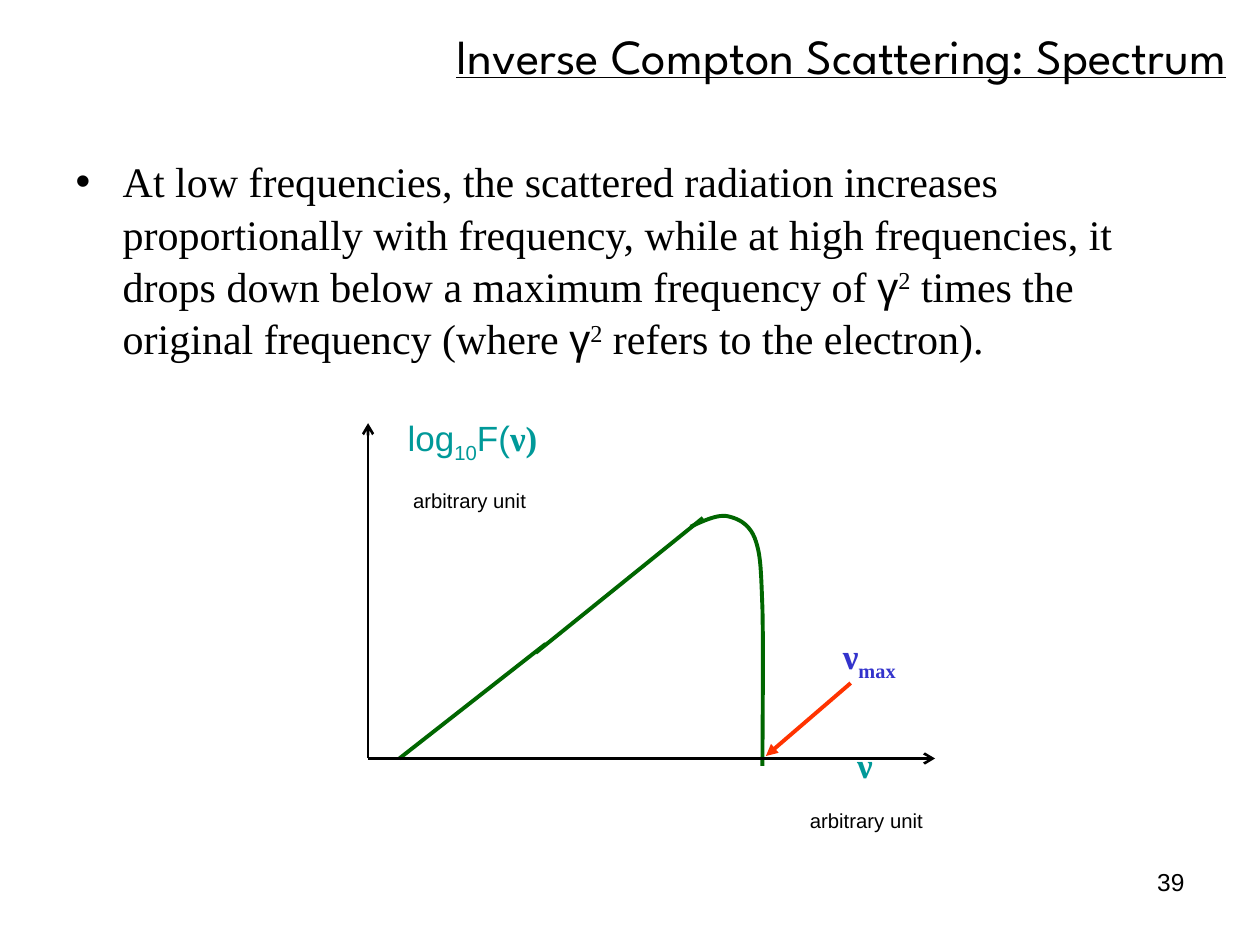
import pptx
import pptx.dml.color
import pptx.enum.shapes
import pptx.enum.text
import pptx.oxml
import pptx.oxml.ns
import pptx.util
import lxml.etree

Cm = pptx.util.Cm
Pt = pptx.util.Pt
RGB = pptx.dml.color.RGBColor
ALIGN = pptx.enum.text.PP_ALIGN
ANCHOR = pptx.enum.text.MSO_ANCHOR
qn = pptx.oxml.ns.qn

BLACK = RGB(0x00, 0x00, 0x00)
GREEN = RGB(0x00, 0x66, 0x00)
TEAL = RGB(0x00, 0x99, 0x99)
BLUE = RGB(0x33, 0x33, 0xCC)
RED = RGB(0xFF, 0x33, 0x00)
SANS, SERIF, HEADING = "Arial", "Times New Roman", "League Spartan"
SUPER, SUB = 30, -25

HEADLINE = [[("Inverse Compton Scattering: Spectrum", HEADING, BLACK, False, 0)]]
GAMMA_SQUARED = [("γ", SANS, BLACK, False, 0), ("2", SERIF, BLACK, False, SUPER)]
STATEMENT = [[
    ("At low frequencies, the scattered radiation increases proportionally with frequency, "
     "while at high frequencies, it drops down below a maximum frequency of ",
     SERIF, BLACK, False, 0),
    *GAMMA_SQUARED,
    (" times the original frequency (where ", SERIF, BLACK, False, 0),
    *GAMMA_SQUARED,
    (" refers to the electron).", SERIF, BLACK, False, 0),
]]
PAGE_NUMBER = [[("39", SANS, BLACK, False, 0)]]
UNIT = ("arbitrary unit ", SANS, BLACK, False, SUB)
AXIS_LABELS = [
    ((15.77, 15.06, 3.51, 1.65), [[("ν ", SERIF, TEAL, True, 0)], [UNIT]]),
    ((7.62, 8.38, 3.81, 1.96), [[
        ("log", SANS, TEAL, False, 0), ("10", SANS, TEAL, False, SUB),
        ("F(", SANS, TEAL, False, 0), ("ν) ", SERIF, TEAL, True, 0), UNIT]]),
    ((15.77, 12.73, 3.51, 1.09),
     [[("ν", SERIF, BLUE, True, 0), ("max", SERIF, BLUE, True, SUB)]]),
]

ORIGIN = (7.42, 15.29)
RISING_LINES = [((10.8, 13.16), (14.17, 10.44)), ((11, 12.98), (8.05, 15.29))]
AXES = [(ORIGIN, (18.85, 15.29)), (ORIGIN, (7.42, 8.53))]
MAX_POINTER = ((17.15, 13.77), (15.44, 15.24))
CUTOFF_START = (13.92, 10.62)
CUTOFF_CURVES = [
    ((14.2, 10.49), (14.48, 10.36), (14.68, 10.41)),
    ((14.91, 10.46), (15.14, 10.59), (15.24, 10.92)),
    ((15.34, 11.23), (15.34, 11.51), (15.37, 12.27)),
    ((15.39, 13.03), (15.37, 15.01), (15.37, 15.44)),
]
CURVE_STEPS = 12


def place(shape, box):
    shape.left, shape.top, shape.width, shape.height = map(Cm, box)


def write(shape, paragraphs, size, align, anchor):
    frame = shape.text_frame
    frame.word_wrap = True
    frame.auto_size = pptx.enum.text.MSO_AUTO_SIZE.NONE
    frame.vertical_anchor = anchor
    for index, runs in enumerate(paragraphs):
        paragraph = frame.paragraphs[0] if index == 0 else frame.add_paragraph()
        paragraph.alignment = align
        paragraph.space_before = Pt(0)
        for text, font, color, bold, baseline in runs:
            run = paragraph.add_run()
            run.text = text
            run.font.name = font
            run.font.size = Pt(size)
            run.font.bold = bold
            run.font.color.rgb = color
            if baseline:
                run.font._element.set("baseline", str(baseline * 1000))


def add_text(slide, box, paragraphs, size, align, anchor):
    label = slide.shapes.add_textbox(*map(Cm, box))
    write(label, paragraphs, size, align, anchor)


def add_line(slide, ends, color, width, head=None):
    start, end = ends
    line = slide.shapes.add_connector(
        pptx.enum.shapes.MSO_CONNECTOR.STRAIGHT, *map(Cm, start + end))
    line.line.color.rgb = color
    line.line.width = Pt(width)
    if head:
        lxml.etree.SubElement(line.line._get_or_add_ln(), qn("a:tailEnd"), type=head)
    lxml.etree.SubElement(line._element.spPr, qn("a:effectLst"))


def bezier_point(corners, t):
    weights = ((1 - t) ** 3, 3 * t * (1 - t) ** 2, 3 * t ** 2 * (1 - t), t ** 3)
    return tuple(Cm(sum(w * c[axis] for w, c in zip(weights, corners))) for axis in (0, 1))


def add_cutoff(slide):
    points, start = [], CUTOFF_START
    for curve in CUTOFF_CURVES:
        points += [bezier_point((start, *curve), step / CURVE_STEPS)
                   for step in range(1, CURVE_STEPS + 1)]
        start = curve[-1]
    builder = slide.shapes.build_freeform(*map(Cm, CUTOFF_START))
    builder.add_line_segments(points, close=False)
    cutoff = builder.convert_to_shape()
    cutoff.shadow.inherit = False
    cutoff.fill.background()
    cutoff.line.color.rgb = GREEN
    cutoff.line.width = Pt(2.25)


def main():
    deck = pptx.Presentation()
    deck.slide_width, deck.slide_height = Cm(25.4), Cm(19.05)
    slide = deck.slides.add_slide(deck.slide_layouts[1])

    headline = slide.shapes.title
    place(headline, (0.2, 0.38, 24.77, 1.45))
    write(headline, HEADLINE, 28, ALIGN.RIGHT, ANCHOR.MIDDLE)
    headline.text_frame.paragraphs[0].runs[0].font.underline = True

    statement = slide.placeholders[1]
    place(statement, (1.27, 2.97, 22.86, 14.05))
    write(statement, STATEMENT, 24, ALIGN.LEFT, ANCHOR.TOP)
    paragraph = statement.text_frame.paragraphs[0]
    paragraph.line_spacing = 1.04
    indent = paragraph._p.get_or_add_pPr()
    indent.set("marL", str(Cm(0.95)))
    indent.set("indent", str(-Cm(0.95)))
    lxml.etree.SubElement(indent, qn("a:buChar"), char="•")

    add_text(slide, (18.21, 17.35, 5.92, 1.32), PAGE_NUMBER, 14, ALIGN.RIGHT, ANCHOR.TOP)
    for ends in RISING_LINES:
        add_line(slide, ends, GREEN, 2.25)
    add_cutoff(slide)
    for ends in AXES:
        add_line(slide, ends, BLACK, 1.5, "arrow")
    for box, paragraphs in AXIS_LABELS:
        add_text(slide, box, paragraphs, 20, ALIGN.CENTER, ANCHOR.MIDDLE)
    add_line(slide, MAX_POINTER, RED, 2.25, "triangle")

    deck.save("out.pptx")


if __name__ == "__main__":
    main()
